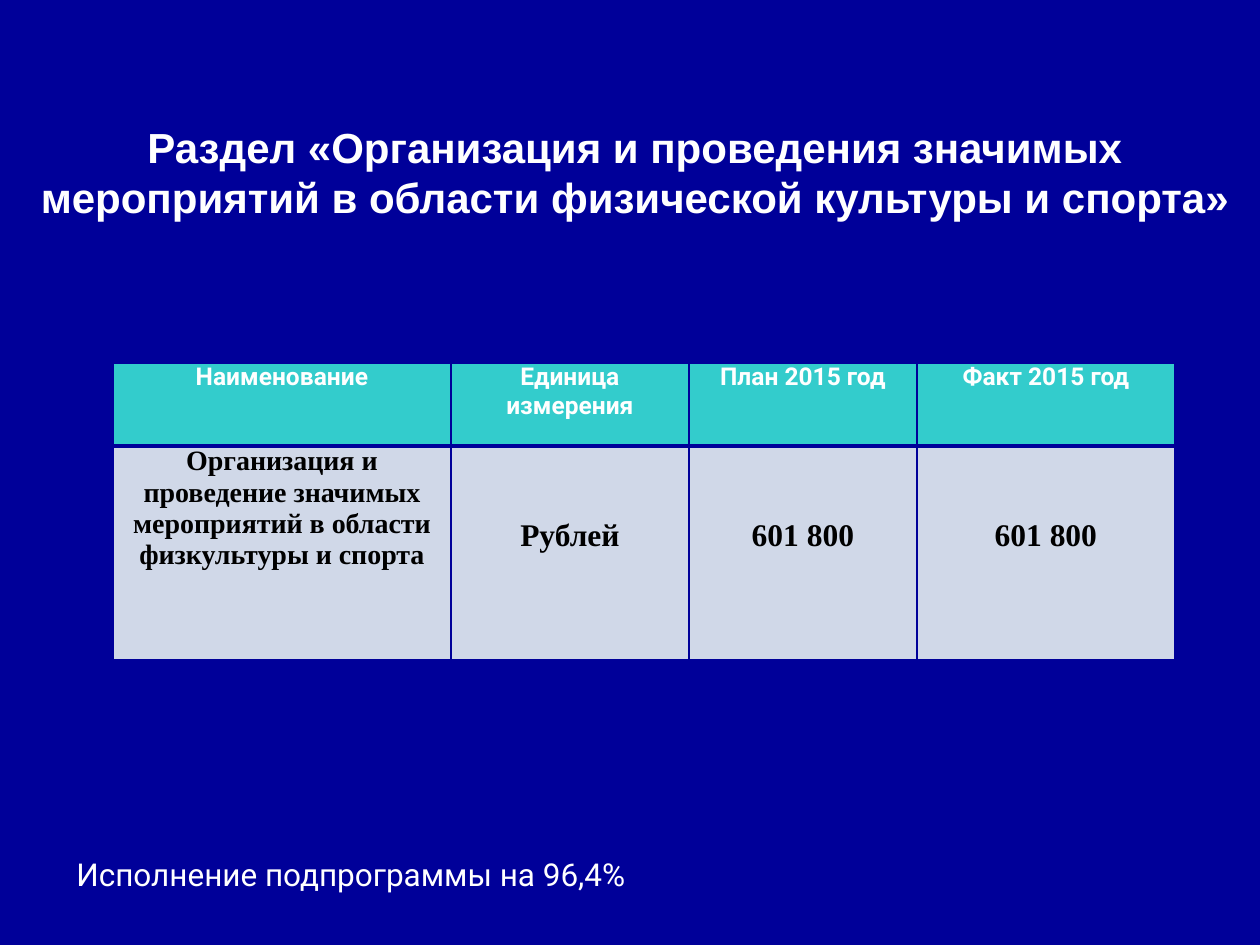
from lxml import etree
from pptx import Presentation, util as u
from pptx.dml.color import RGBColor
from pptx.enum import text
from pptx.oxml import ns

PX = u.Inches(1) // 126
NAVY = RGBColor(0x00, 0x00, 0x99)
TEAL = RGBColor(0x33, 0xCC, 0xCC)
PALE = RGBColor(0xD0, 0xD8, 0xE8)
WHITE = RGBColor(0xFF, 0xFF, 0xFF)
BLACK = RGBColor(0x00, 0x00, 0x00)


def style(par, face, size, color, bold=False, align=text.PP_ALIGN.CENTER):
    par.alignment = align
    par.font.name, par.font.size = face, u.Pt(size)
    par.font.bold, par.font.color.rgb = bold, color


def edge(cell, side, width):
    """Draw one navy cell border; side is L, R, T or B."""
    line = etree.SubElement(cell._tc.get_or_add_tcPr(), ns.qn(f"a:ln{side}"),
                            w=str(u.Pt(width)))
    fill = etree.SubElement(line, ns.qn("a:solidFill"))
    etree.SubElement(fill, ns.qn("a:srgbClr"), val=str(NAVY))


deck = Presentation()
deck.slide_width, deck.slide_height = 1260 * PX, 945 * PX
slide = deck.slides.add_slide(deck.slide_layouts[5])
slide.background.fill.solid()
slide.background.fill.fore_color.rgb = NAVY

# Title
title = slide.shapes.title
title.left, title.top, title.width, title.height = 5 * PX, 115 * PX, 1260 * PX, 151 * PX
frame = title.text_frame
frame.text = "Раздел «Организация и проведения значимых мероприятий в области физической культуры и спорта»"
frame.auto_size = text.MSO_AUTO_SIZE.NONE
frame.vertical_anchor = text.MSO_ANCHOR.TOP
style(frame.paragraphs[0], "Arial", 24, WHITE, True)

# Table
HEADS = ["Наименование", "Единица измерения", "План 2015 год", "Факт 2015 год"]
ITEMS = ["Организация и проведение значимых мероприятий в области физкультуры и спорта",
         "Рублей", "601 800", "601 800"]
WIDTHS = [338, 238, 228, 258]
HEIGHTS = [83, 214]

table = slide.shapes.add_table(2, 4, 113 * PX, 363 * PX,
                               sum(WIDTHS) * PX, sum(HEIGHTS) * PX).table
for col, width in zip(table.columns, WIDTHS):
    col.width = width * PX
for row, height in zip(table.rows, HEIGHTS):
    row.height = height * PX

for r, words in enumerate([HEADS, ITEMS]):
    for c, word in enumerate(words):
        cell = table.cell(r, c)
        cell.text = word
        cell.margin_left = cell.margin_right = 9 * PX
        cell.margin_top = 72 * PX if r and c else 0
        cell.margin_bottom = 0
        for side in "LRTB":
            edge(cell, side, 3 if side == "BT"[r] else 1)
        cell.fill.solid()
        cell.fill.fore_color.rgb = PALE if r else TEAL
        par = cell.text_frame.paragraphs[0]
        if r:
            style(par, "Times New Roman", 18 if c else 16, BLACK, True)
        else:
            style(par, "Roboto", 14, WHITE, True)

# Result line
note = slide.shapes.add_textbox(64 * PX, 849 * PX, 1091 * PX, 50 * PX).text_frame
note.word_wrap = True
note.text = "Исполнение подпрограммы на 96,4%"
style(note.paragraphs[0], "Roboto", 18, WHITE, align=text.PP_ALIGN.LEFT)

deck.save("out.pptx")
